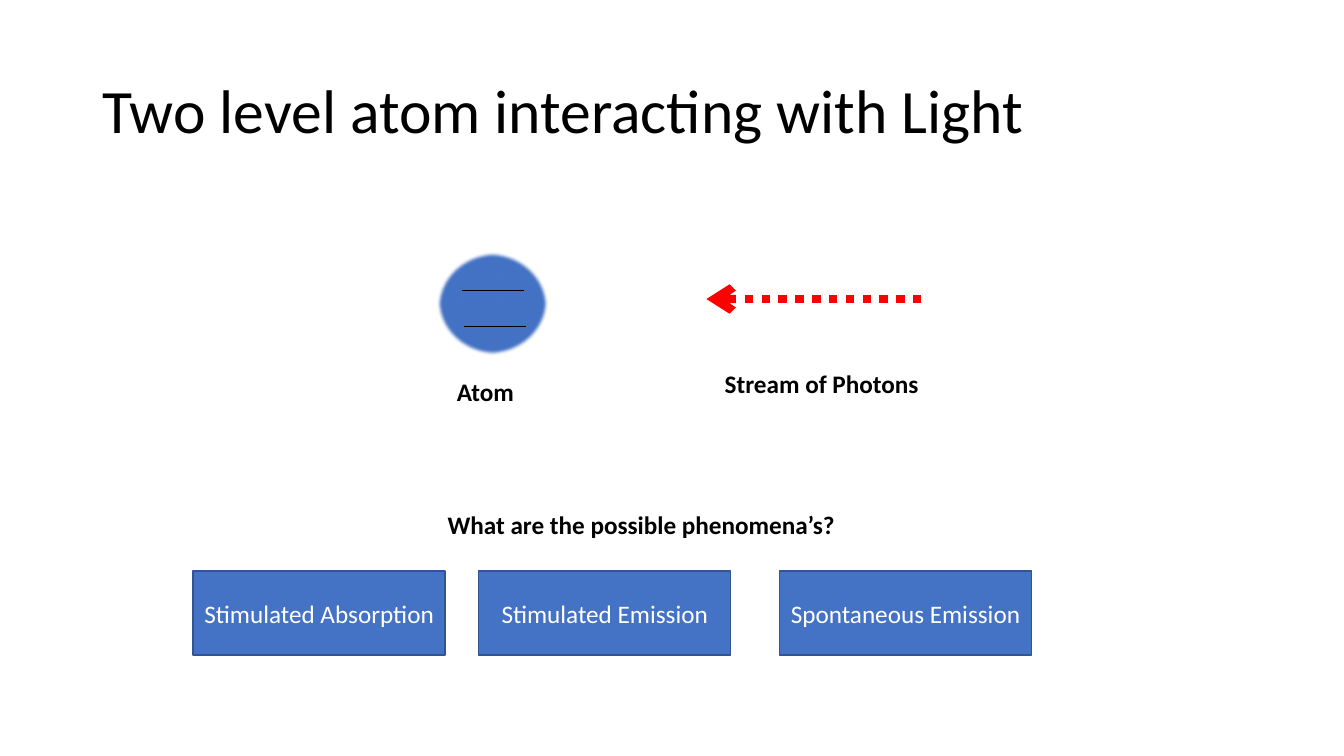
import dataclasses

import lxml.etree
import pptx
import pptx.dml.color
import pptx.enum.dml
import pptx.enum.shapes
import pptx.enum.text
import pptx.oxml.ns
import pptx.util

COLUMNS, ROWS = 160, 90
SLIDE_WIDTH = pptx.util.Inches(13.33)
SLIDE_HEIGHT = pptx.util.Inches(7.5)

SHAPES = pptx.enum.shapes.MSO_SHAPE
ANCHORS = pptx.enum.text.MSO_ANCHOR
ALIGNMENTS = pptx.enum.text.PP_ALIGN


@dataclasses.dataclass(frozen=True)
class Theme:
    font: str = "Calibri"
    title_size: int = 44
    body_size: int = 18
    text: str = "000000"
    inverse: str = "FFFFFF"
    fill: str = "4472C4"
    box_line: str = "325491"
    atom_line: str = "00B0F0"
    photon: str = "FF0000"


THEME = Theme()


def across(columns):
    return round(SLIDE_WIDTH * columns / COLUMNS)


def down(rows):
    return round(SLIDE_HEIGHT * rows / ROWS)


def place(column, row, columns, rows):
    return across(column), down(row), across(columns), down(rows)


def rgb(color):
    return pptx.dml.color.RGBColor.from_string(color)


def add_child(parent, tag, **attributes):
    child = lxml.etree.SubElement(parent, pptx.oxml.ns.qn(tag))
    for name, value in attributes.items():
        child.set(name, value)
    return child


def write(frame, text, size=THEME.body_size, color=THEME.text, bold=False):
    para = frame.paragraphs[0]
    span = para.add_run()
    span.text = text
    span.font.name = THEME.font
    span.font.size = pptx.util.Pt(size)
    span.font.bold = bold
    span.font.color.rgb = rgb(color)
    return para


def add_title(page, text):
    box = page.shapes.add_textbox(*place(11, 4.8, 138, 17.4))
    box.text_frame.word_wrap = True
    box.text_frame.vertical_anchor = ANCHORS.MIDDLE
    write(box.text_frame, text, THEME.title_size).line_spacing = 0.9


def add_label(page, text, column, row, columns):
    box = page.shapes.add_textbox(*place(column, row, columns, 4.8))
    box.text_frame.word_wrap = False
    write(box.text_frame, text, bold=True)


def add_filled(page, kind, area, line_color):
    shape = page.shapes.add_shape(kind, *place(*area))
    shape.shadow.inherit = False
    shape.fill.solid()
    shape.fill.fore_color.rgb = rgb(THEME.fill)
    shape.line.color.rgb = rgb(line_color)
    shape.line.width = pptx.util.Pt(1)
    return shape


def add_line(page, start, end, row, color, width):
    line = page.shapes.add_connector(
        pptx.enum.shapes.MSO_CONNECTOR.STRAIGHT,
        across(start), down(row), across(end), down(row))
    line.line.color.rgb = rgb(color)
    line.line.width = pptx.util.Pt(width)
    add_child(line._element.spPr, "a:effectLst")
    return line


def add_atom(page):
    """Draw a soft-edged atom with its two energy levels."""
    atom = add_filled(page, SHAPES.OVAL, (52, 30, 13.2, 12.2), THEME.atom_line)
    effects = atom._element.spPr.find(pptx.oxml.ns.qn("a:effectLst"))
    add_child(effects, "a:softEdge", rad=str(pptx.util.Pt(2.5)))
    for column, row in ((55, 34.6), (55.2, 38.9)):
        add_line(page, column, column + 7.4, row, THEME.text, 1)


def add_photon_stream(page):
    stream = add_line(page, 109.7, 84.1, 35.6, THEME.photon, 6)
    stream.line.dash_style = pptx.enum.dml.MSO_LINE.ROUND_DOT
    add_child(stream.line._get_or_add_ln(), "a:tailEnd", type="arrow")


def add_phenomenon(page, text, column):
    box = add_filled(page, SHAPES.RECTANGLE, (column, 68, 30, 10), THEME.box_line)
    box.text_frame.word_wrap = True
    box.text_frame.vertical_anchor = ANCHORS.MIDDLE
    para = write(box.text_frame, text, color=THEME.inverse)
    para.alignment = ALIGNMENTS.CENTER


def main():
    deck = pptx.Presentation()
    deck.slide_width, deck.slide_height = SLIDE_WIDTH, SLIDE_HEIGHT
    page = deck.slides.add_slide(deck.slide_layouts[6])

    add_title(page, "Two level atom interacting with Light")
    add_atom(page)
    add_photon_stream(page)
    add_label(page, "Atom", 53.2, 44.2, 9.2)
    add_label(page, "Stream of Photons", 85.1, 43.2, 25.7)
    add_label(page, "What are the possible phenomena’s?", 52.1, 60, 48.8)
    for text, column in (("Stimulated Absorption", 23),
                         ("Stimulated Emission", 57),
                         ("Spontaneous Emission", 92.8)):
        add_phenomenon(page, text, column)

    deck.save("out.pptx")


if __name__ == "__main__":
    main()
